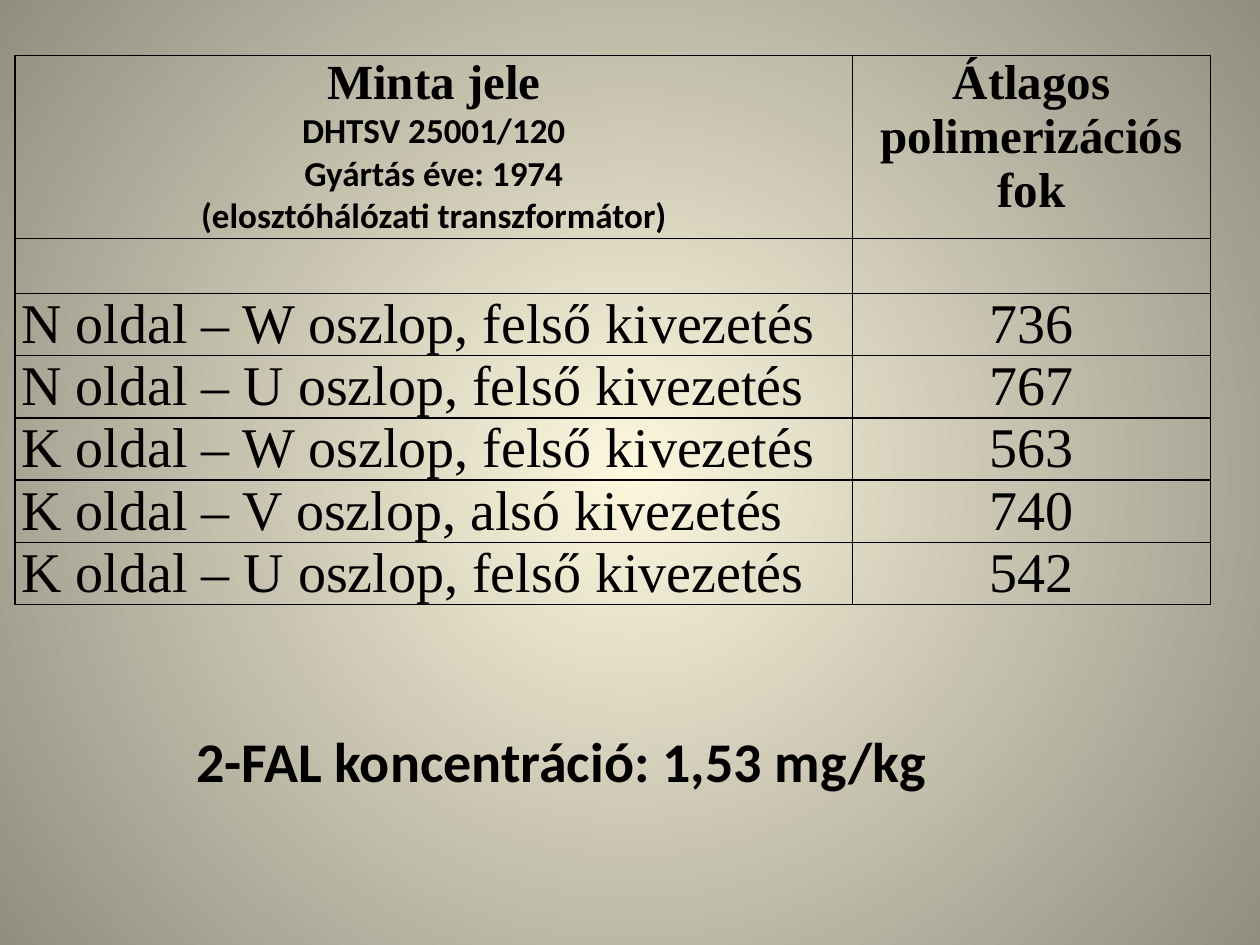
"""Build the slide on average polymerisation degree by sample."""
from dataclasses import dataclass

from lxml.etree import SubElement
from pptx import Presentation
from pptx.dml.color import RGBColor
from pptx.enum.text import MSO_AUTO_SIZE as AutoSize, PP_ALIGN as Align
from pptx.oxml import parse_xml
from pptx.oxml.ns import nsdecls, qn
from pptx.slide import Slide
from pptx.table import _Cell as Cell
from pptx.util import Cm, Pt

BLACK = RGBColor(0x00, 0x00, 0x00)
CREAM = RGBColor(0xFC, 0xF7, 0xDD)
OLIVE = RGBColor(0x91, 0x8E, 0x81)
SERIF, SANS = "Times New Roman", "Calibri"


@dataclass(frozen=True)
class Line:
    text: str
    size: int
    face: str = SERIF
    bold: bool = False
    align: Align = Align.CENTER


@dataclass(frozen=True)
class Sample:
    name: str
    degree: int


HEADINGS = (
    (
        Line("Minta jele", 28, bold=True),
        Line("DHTSV 25001/120", 20, SANS, True),
        Line("Gyártás éve: 1974", 20, SANS, True),
        Line("(elosztóhálózati transzformátor)", 20, SANS, True),
    ),
    (Line("Átlagos polimerizációs fok", 28, bold=True),),
)
SAMPLES = (
    Sample("N oldal – W oszlop, felső kivezetés", 736),
    Sample("N oldal – U oszlop, felső kivezetés", 767),
    Sample("K oldal – W oszlop, felső kivezetés", 563),
    Sample("K oldal – V oszlop, alsó kivezetés", 740),
    Sample("K oldal – U oszlop, felső kivezetés", 542),
)
COLUMN_WIDTHS = (Cm(16.89), Cm(7.21))
ROW_HEIGHTS = (Cm(3.67), Cm(1.11)) + (Cm(1.25),) * len(SAMPLES)


def write(frame, lines: tuple[Line, ...]) -> None:
    frame.text = "\n".join(line.text for line in lines)
    for paragraph, line in zip(frame.paragraphs, lines):
        paragraph.alignment = line.align
        for run in paragraph.runs:
            run.font.name = line.face
            run.font.size = Pt(line.size)
            run.font.bold = line.bold
            run.font.color.rgb = BLACK


def style_cell(cell: Cell) -> None:
    cell.margin_left = cell.margin_right = Cm(0.13)
    cell.margin_top = cell.margin_bottom = 0
    properties = cell._tc.get_or_add_tcPr()
    for side in ("lnL", "lnR", "lnT", "lnB"):
        border = SubElement(properties, qn(f"a:{side}"), w=str(Pt(1)))
        fill = SubElement(border, qn("a:solidFill"))
        SubElement(fill, qn("a:srgbClr"), val=str(BLACK))
    cell.fill.background()


def paint_background(slide: Slide) -> None:
    fill = slide.background.fill
    fill.gradient()
    for stop, colour in zip(fill.gradient_stops, (CREAM, OLIVE)):
        stop.color.rgb = colour
    gradient = slide.element.xpath(".//p:bg//a:gradFill")[0]
    gradient.replace(
        gradient.find(qn("a:lin")),
        parse_xml(
            f'<a:path {nsdecls("a")} path="circle">'
            '<a:fillToRect l="50000" t="50000" r="50000" b="50000"/></a:path>'
        ),
    )


def add_samples(slide: Slide) -> None:
    table = slide.shapes.add_table(
        len(ROW_HEIGHTS), len(COLUMN_WIDTHS),
        Cm(0.3), Cm(1.12), sum(COLUMN_WIDTHS), sum(ROW_HEIGHTS),
    ).table
    table.first_row = table.horz_banding = False
    for column, width in zip(table.columns, COLUMN_WIDTHS):
        column.width = width
    for row, height in zip(table.rows, ROW_HEIGHTS):
        row.height = height
    for cell in table.iter_cells():
        style_cell(cell)
    for index, lines in enumerate(HEADINGS):
        write(table.cell(0, index).text_frame, lines)
    for index, sample in enumerate(SAMPLES, start=2):
        name = Line(sample.name, 32, align=Align.LEFT)
        write(table.cell(index, 0).text_frame, (name,))
        write(table.cell(index, 1).text_frame, (Line(str(sample.degree), 32),))


def add_concentration(slide: Slide) -> None:
    concentration = slide.shapes.add_textbox(Cm(3.71), Cm(14.53), Cm(16), Cm(1.63))
    frame = concentration.text_frame
    frame.word_wrap = True
    frame.auto_size = AutoSize.SHAPE_TO_FIT_TEXT
    write(frame, (Line("2-FAL koncentráció: 1,53 mg/kg", 32, SANS, True, Align.LEFT),))


def main() -> None:
    deck = Presentation()
    deck.slide_width, deck.slide_height = Cm(25.4), Cm(19.05)
    slide = deck.slides.add_slide(deck.slide_layouts[6])
    paint_background(slide)
    add_samples(slide)
    add_concentration(slide)
    deck.save("out.pptx")


if __name__ == "__main__":
    main()
